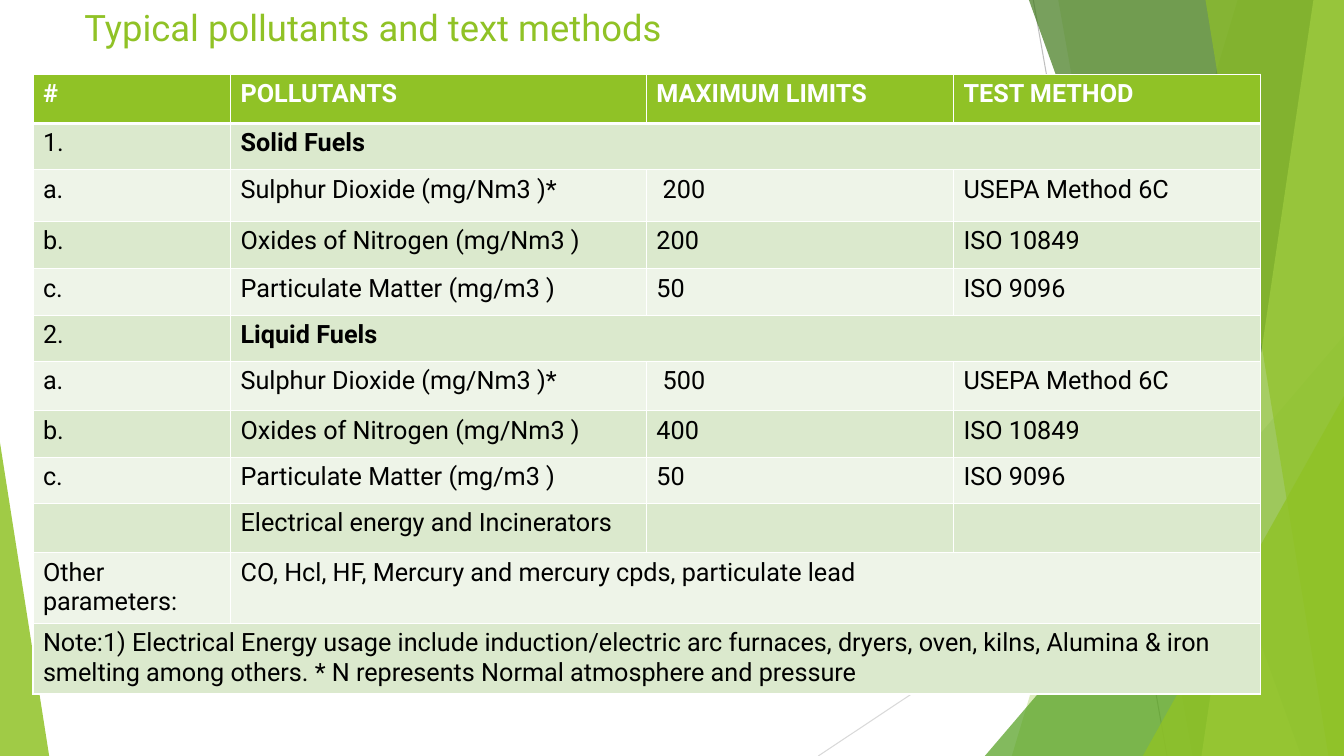
from dataclasses import dataclass

import lxml.etree
import pptx
import pptx.dml.color
import pptx.enum.shapes
import pptx.oxml.ns
import pptx.util

Cm = pptx.util.Cm
Pt = pptx.util.Pt
WIDE, HIGH = 33.87, 19.05


@dataclass(frozen=True)
class Theme:
    font: str = "Roboto"
    title_size: int = 26
    cell_size: int = 18
    green: str = "90C226"
    leaf: str = "54A021"
    moss: str = "3F7819"
    lime: str = "C0E474"
    white: str = "FFFFFF"
    black: str = "000000"
    dark_band: str = "DBE9CD"
    light_band: str = "EEF4E8"
    gray: str = "BFBFBF"
    pale_gray: str = "D9D9D9"


THEME = Theme()


@dataclass(frozen=True)
class Ray:
    start: tuple[float, float]
    end: tuple[float, float]
    color: str


@dataclass(frozen=True)
class Facet:
    """Panel running from its slanted left side to the slide's right edge."""
    top_x: float
    base_x: float
    color: str
    alpha: int


@dataclass(frozen=True)
class Wedge:
    left: float
    top: float
    width: float
    peak: float
    color: str
    alpha: int


@dataclass(frozen=True)
class Row:
    height: float
    texts: tuple[str, ...]  # the last text spans any columns left over
    bold: bool = False


def fuel_rows(mark: str, name: str, limits: tuple[str, ...],
              heights: tuple[float, ...]) -> list[Row]:
    tests = (("a.", "Sulphur Dioxide (mg/Nm3 )*", "USEPA Method 6C"),
             ("b.", "Oxides of Nitrogen (mg/Nm3 )", "ISO 10849"),
             ("c.", "Particulate Matter (mg/m3 )", "ISO 9096"))
    rows = [Row(1.17, (mark, name), True)]
    for (label, matter, method), limit, height in zip(tests, limits, heights):
        rows.append(Row(height, (label, matter, limit, method)))
    return rows


RAYS = (Ray((26.04, 0), (29.41, HIGH), THEME.gray),
        Ray((WIDE, 10.24), (20.62, HIGH), THEME.pale_gray))
# Back to front
PANELS = (
    Facet(31.19, 25.5, THEME.green, 30),
    Facet(26.67, 30.05, THEME.green, 20),
    Wedge(24.82, 8.46, 9.05, 1, THEME.leaf, 72),
    Facet(25.93, 32.79, THEME.moss, 70),
    Facet(33.1, 30.28, THEME.lime, 70),
    Facet(30.38, 33.48, THEME.green, 65),
    Wedge(28.8, 9.98, 5.07, 1, THEME.green, 80),
    Wedge(0, 11.15, 1.24, 0, THEME.green, 85),
)
COLUMNS = (4.98, 10.48, 7.74, 7.74)
ROWS = [
    Row(1.24, ("#", "POLLUTANTS", "MAXIMUM LIMITS", "TEST METHOD")),
    *fuel_rows("1.", "Solid Fuels", (" 200", "200", "50"), (1.3, 1.19, 1.17)),
    *fuel_rows("2.", "Liquid Fuels", (" 500", "400", "50"), (1.24, 1.17, 1.17)),
    Row(1.24, ("", "Electrical energy and Incinerators", "", "")),
    Row(1.75, ("Other parameters:",
               "CO, Hcl, HF, Mercury and mercury cpds, particulate lead")),
    Row(1.75, ("Note:1) Electrical Energy usage include induction/electric arc "
               "furnaces, dryers, oven, kilns, Alumina & iron smelting among "
               "others. * N represents Normal atmosphere and pressure",)),
]


def rgb(color: str) -> pptx.dml.color.RGBColor:
    return pptx.dml.color.RGBColor.from_string(color)


def add_node(parent, tag: str, **values: str):
    node = lxml.etree.SubElement(parent, pptx.oxml.ns.qn(tag))
    for key, value in values.items():
        node.set(key, value)
    return node


def style_text(frame, size: int, color: str, bold: bool = False) -> None:
    for part in frame.paragraphs:
        for run in part.runs:
            run.font.name = THEME.font
            run.font.size = Pt(size)
            run.font.bold = bold
            run.font.color.rgb = rgb(color)


def draw_ray(slide, ray: Ray) -> None:
    line = slide.shapes.add_connector(
        pptx.enum.shapes.MSO_CONNECTOR.STRAIGHT,
        *map(Cm, ray.start), *map(Cm, ray.end))
    line.line.color.rgb = rgb(ray.color)
    line.line.width = Pt(0.75)
    add_node(line._element.spPr, "a:effectLst")


def draw_panel(slide, panel: Facet | Wedge) -> None:
    if isinstance(panel, Facet):
        pen = slide.shapes.build_freeform(Cm(panel.top_x), 0)
        pen.add_line_segments([(Cm(WIDE), 0), (Cm(WIDE), Cm(HIGH)),
                               (Cm(panel.base_x), Cm(HIGH))], close=True)
        shape = pen.convert_to_shape()
    else:
        shape = slide.shapes.add_shape(
            pptx.enum.shapes.MSO_SHAPE.ISOSCELES_TRIANGLE,
            Cm(panel.left), Cm(panel.top), Cm(panel.width), Cm(HIGH - panel.top))
        shape.adjustments[0] = panel.peak
    shape.shadow.inherit = False
    shape.line.fill.background()
    shape.fill.solid()
    shape.fill.fore_color.rgb = rgb(panel.color)
    tint = shape._element.spPr.find(".//" + pptx.oxml.ns.qn("a:srgbClr"))
    add_node(tint, "a:alpha", val=str(panel.alpha * 1000))


def draw_title(slide, text: str) -> None:
    box = slide.shapes.add_textbox(Cm(1.88), 0, Cm(23.88), Cm(1.3))
    box.text_frame.word_wrap = True
    box.text_frame.text = text
    style_text(box.text_frame, THEME.title_size, THEME.green)


def style_cell(cell, index: int) -> None:
    widths = {"L": 1, "R": 1, "T": 3 if index == 1 else 1,
              "B": 3 if index == 0 else 1}
    props = cell._tc.get_or_add_tcPr()
    for side, width in widths.items():
        edge = add_node(props, "a:ln" + side, w=str(Pt(width)))
        add_node(add_node(edge, "a:solidFill"), "a:srgbClr", val=THEME.white)
    band = THEME.dark_band if index % 2 else THEME.light_band
    cell.fill.solid()
    cell.fill.fore_color.rgb = rgb(band if index else THEME.green)


def draw_table(slide) -> None:
    table = slide.shapes.add_table(
        len(ROWS), len(COLUMNS), Cm(0.83), Cm(1.87),
        Cm(sum(COLUMNS)), Cm(sum(row.height for row in ROWS))).table
    table.horz_banding = False
    for column, width in zip(table.columns, COLUMNS):
        column.width = Cm(width)
    for index, row in enumerate(ROWS):
        table.rows[index].height = Cm(row.height)
        for place in range(len(COLUMNS)):
            style_cell(table.cell(index, place), index)
        last = len(row.texts) - 1
        for place, text in enumerate(row.texts):
            cell = table.cell(index, place)
            cell.text_frame.text = text
            style_text(cell.text_frame, THEME.cell_size,
                       THEME.black if index else THEME.white,
                       index == 0 or (row.bold and place == last))
        if last < len(COLUMNS) - 1:
            table.cell(index, last).merge(table.cell(index, len(COLUMNS) - 1))


def main() -> None:
    deck = pptx.Presentation()
    deck.slide_width, deck.slide_height = Cm(WIDE), Cm(HIGH)
    slide = deck.slides.add_slide(deck.slide_layouts[6])
    # Backdrop
    for ray in RAYS:
        draw_ray(slide, ray)
    for panel in PANELS:
        draw_panel(slide, panel)
    # Content
    draw_title(slide, "Typical pollutants and text methods")
    draw_table(slide)
    deck.save("out.pptx")


if __name__ == "__main__":
    main()
